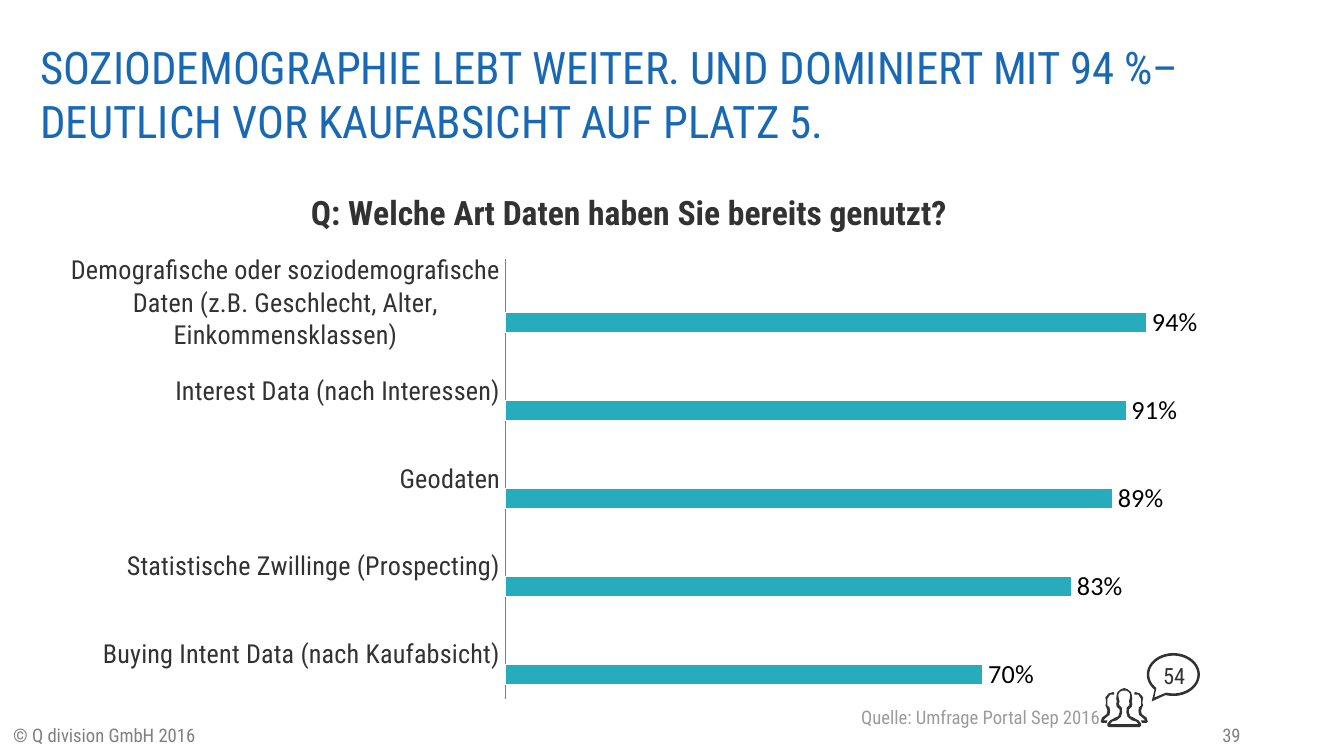
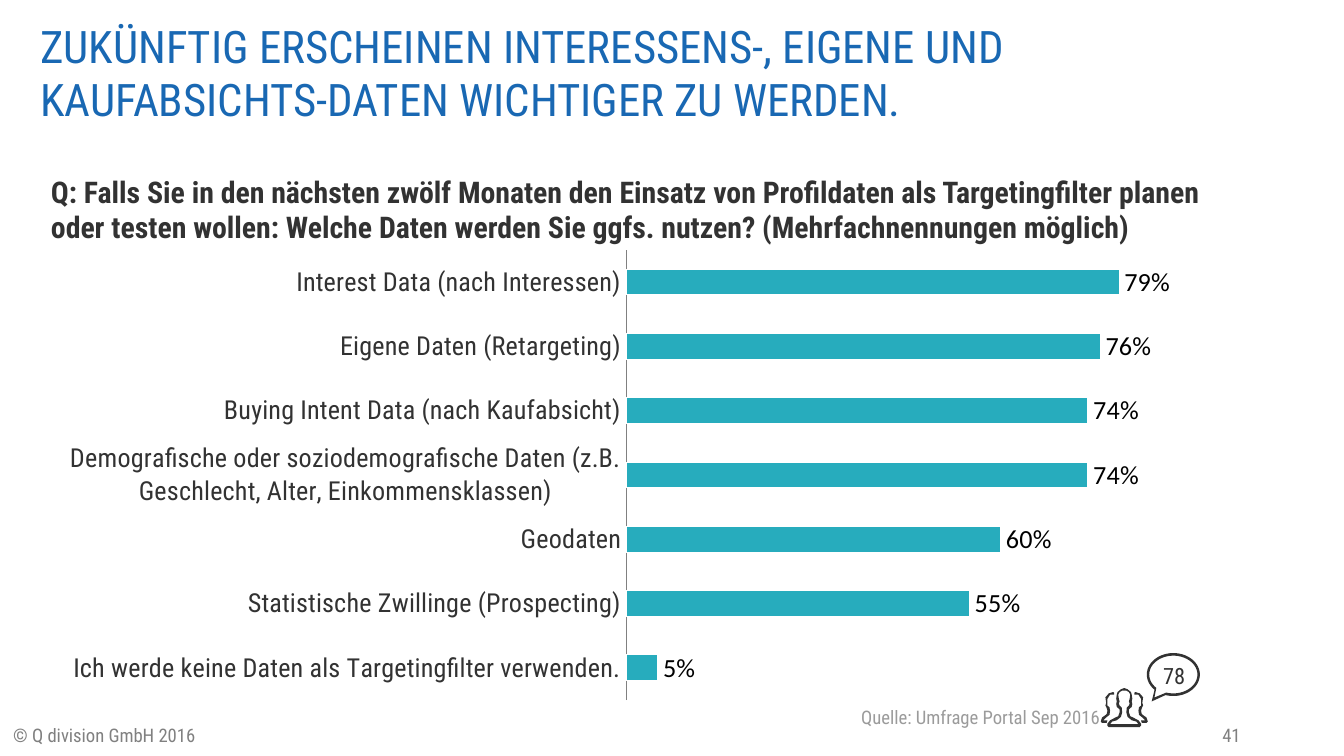
import math
from dataclasses import dataclass

from lxml import etree
from pptx import Presentation
from pptx import util as u
from pptx.chart.data import CategoryChartData
from pptx.dml.color import RGBColor
from pptx.enum import chart as ch
from pptx.enum import text as tx
from pptx.oxml.ns import qn

Pt = u.Pt
Point = tuple[float, float]

FONT, LABEL_FONT = "Roboto Condensed", "Calibri"
BLUE, TEAL, RED, GREEN = "1968B3", "27ACBD", "C0504D", "9BBB59"
DARK, GREY, LIGHT_GREY, BLACK, WHITE = "323232", "808080", "9B9B9B", "000000", "FFFFFF"

DEMOGRAPHY = "Demografische oder soziodemografische Daten (z.B. Geschlecht, Alter, Einkommensklassen)"
INTEREST = "Interest Data (nach Interessen)"
BUYING = "Buying Intent Data (nach Kaufabsicht)"
TWINS = "Statistische Zwillinge (Prospecting)"
GEO = "Geodaten"

# Halves of the audience icon: distance left of its axis, distance below its top.
AUDIENCE_AXIS, AUDIENCE_TOP = 602.3, 368.6
PERSON_OUTSIDE = [
    (0, 0), (1.8, 0.7), (3.6, 2.2), (4, 3.6), (4.3, 5.8), (4, 7.2), (4.3, 8.6),
    (4, 10.1), (2.5, 11.5), (2.5, 13), (3.2, 15.1), (4.7, 15.8), (7.6, 17.3),
    (9, 19.1), (9, 20.2), (8.3, 20.9),
]
PERSON_INSIDE = [
    (0, 1.4), (1.1, 1.4), (2.5, 2.2), (3.2, 3.6), (2.9, 5.8), (2.5, 7.2), (2.9, 8.3),
    (2.5, 9.4), (1.4, 10.4), (1.1, 13), (1.8, 15.5), (4, 17.3), (6.5, 18), (7.6, 19.4),
]
NEIGHBOUR = [
    (9.7, 15.8), (7.9, 14.4), (7.6, 12.2), (7.9, 10.4), (9, 9.4), (9, 7.2), (9, 5.8),
    (7.6, 3.6), (5.4, 3.6), (5.4, 2.5), (6.1, 2.2), (8.3, 2.9), (10.1, 5), (9.7, 7.9),
    (10.1, 9.4), (9.4, 10.8), (9, 12.2), (9.4, 14), (10.4, 14.8), (11.9, 15.8),
    (12.6, 18), (11.9, 18.7), (9.4, 18.7), (9, 17.3), (11.2, 17.3),
]


@dataclass
class Box:
    left: float
    top: float
    width: float
    height: float

    def lengths(self) -> tuple:
        return Pt(self.left), Pt(self.top), Pt(self.width), Pt(self.height)


@dataclass
class TextStyle:
    size: float
    color: str
    bold: bool = False
    align: tx.PP_ALIGN = tx.PP_ALIGN.LEFT


@dataclass
class BarChart:
    box: Box
    plot: Box  # fractions of the chart area
    maximum: float
    bars: list[tuple[str, float]]  # from bottom to top
    empty_series: int = 0
    title: str = ""


@dataclass
class SurveySlide:
    title: str
    title_top: float
    number: str
    answers: str
    chart: BarChart
    question: str = ""


FOOTER = TextStyle(10, GREY)
PAGE_NUMBER = TextStyle(10, GREY, align=tx.PP_ALIGN.RIGHT)
TITLE = TextStyle(24, BLUE)
SOURCE = TextStyle(10, LIGHT_GREY)
COUNT = TextStyle(12, DARK, align=tx.PP_ALIGN.CENTER)
QUESTION = TextStyle(16, DARK, bold=True)
CHART_TITLE = TextStyle(18, DARK, bold=True)

SLIDES = [
    SurveySlide(
        "SOZIODEMOGRAPHIE LEBT WEITER. UND DOMINIERT MIT 94 %– "
        "DEUTLICH VOR KAUFABSICHT AUF PLATZ 5.",
        28.1, "39", "54",
        BarChart(
            Box(25.2, 89.3, 623.5, 291.6), Box(0.394, 0.17, 0.586, 0.808), 1.0,
            [(BUYING, 0.7), (TWINS, 0.83), (GEO, 0.89), (INTEREST, 0.91), (DEMOGRAPHY, 0.94)],
            empty_series=2,
            title="Q: Welche Art Daten haben Sie bereits genutzt?",
        ),
    ),
    SurveySlide(
        "ZUKÜNFTIG ERSCHEINEN INTERESSENS-, EIGENE UND "
        "KAUFABSICHTS-DATEN WICHTIGER ZU WERDEN.",
        16.6, "41", "78",
        BarChart(
            Box(25.2, 128.9, 623.5, 252), Box(0.498, 0.02, 0.482, 0.957), 0.9,
            [("Ich werde keine Daten als Targetingfilter verwenden.", 0.05), (TWINS, 0.55),
             (GEO, 0.6), (DEMOGRAPHY, 0.74), (BUYING, 0.74),
             ("Eigene Daten (Retargeting)", 0.76), (INTEREST, 0.79)],
        ),
        "Q: Falls Sie in den nächsten zwölf Monaten den Einsatz von Profildaten als "
        "Targetingfilter planen oder testen wollen: Welche Daten werden Sie ggfs. nutzen? "
        "(Mehrfachnennungen möglich)",
    ),
]


def rgb(color: str) -> RGBColor:
    return RGBColor.from_string(color)


def set_font(font, size: float, color: str, bold: bool = False, name: str = FONT) -> None:
    font.name, font.size, font.bold = name, Pt(size), bold
    font.color.rgb = rgb(color)


def add_text(slide, box: Box, words: str, style: TextStyle, wrap: bool = True):
    frame = slide.shapes.add_textbox(*box.lengths()).text_frame
    frame.word_wrap = wrap
    frame.auto_size = tx.MSO_AUTO_SIZE.SHAPE_TO_FIT_TEXT
    paragraph = frame.paragraphs[0]
    paragraph.text, paragraph.alignment = words, style.align
    set_font(paragraph.font, style.size, style.color, style.bold)
    return frame


def add_title(slide, words: str, top: float) -> None:
    frame = add_text(slide, Box(1.4, top, 664.6, 43.9), words, TITLE)
    frame.auto_size = tx.MSO_AUTO_SIZE.NONE
    frame.vertical_anchor = tx.MSO_ANCHOR.MIDDLE
    frame.margin_left = Pt(20.2)
    frame.margin_top = frame.margin_right = frame.margin_bottom = 0


def add_outline(slide, contours: list[list[Point]]) -> None:
    """Fill closed contours; a contour inside another one cuts a hole."""
    paths = [[(Pt(x), Pt(y)) for x, y in contour] for contour in contours]
    builder = slide.shapes.build_freeform(*paths[0][0], scale=1.0)
    builder.add_line_segments(paths[0][1:])
    for path in paths[1:]:
        builder.move_to(*path[0])
        builder.add_line_segments(path[1:])
    shape = builder.convert_to_shape()
    shape.shadow.inherit = False
    shape.fill.solid()
    shape.fill.fore_color.rgb = rgb(DARK)
    shape.line.fill.background()


def bubble(radius_x: float, radius_y: float, tip: Point) -> list[Point]:
    """Ellipse that leaves its rim at the lower left for the tip of the tail."""
    angles = [math.radians(degrees) for degrees in range(135, 468, 4)]
    rim = [(628.6 + radius_x * math.cos(a), 361.4 + radius_y * math.sin(a)) for a in angles]
    return rim + [tip, rim[0]]


def audience_side(half: list[Point], side: int) -> list[Point]:
    return [(AUDIENCE_AXIS + side * x, AUDIENCE_TOP + y) for x, y in half]


def person(half: list[Point]) -> list[Point]:
    left, right = audience_side(half, -1), audience_side(half, 1)
    return left + right[::-1]


def add_audience(slide, answers: str) -> None:
    add_outline(slide, [bubble(14.2, 11.5, (617, 375.8)), bubble(12.9, 10.1, (618.5, 373.7))])
    add_text(slide, Box(614.2, 351.4, 29.5, 21.6), answers, COUNT)
    neighbours = [audience_side(NEIGHBOUR + NEIGHBOUR[:1], side) for side in (-1, 1)]
    add_outline(slide, [person(PERSON_OUTSIDE), person(PERSON_INSIDE), *neighbours])


def place_plot(chart, plot: Box) -> None:
    """Fix the inner plot area inside the chart."""
    area = chart._chartSpace.chart.plotArea
    for automatic in area.findall(qn("c:layout")):
        area.remove(automatic)
    layout = etree.Element(qn("c:layout"))
    manual = etree.SubElement(layout, qn("c:manualLayout"))
    settings = {
        "layoutTarget": "inner", "xMode": "edge", "yMode": "edge",
        "x": plot.left, "y": plot.top, "w": plot.width, "h": plot.height,
    }
    for name, value in settings.items():
        etree.SubElement(manual, qn(f"c:{name}")).set("val", str(value))
    area.insert(0, layout)


def add_bar_chart(slide, bar_chart: BarChart) -> None:
    data = CategoryChartData(number_format="0%")
    data.categories = [name for name, _ in bar_chart.bars]
    data.add_series("Series 1", [value for _, value in bar_chart.bars])
    for index in range(bar_chart.empty_series):
        data.add_series(f"Series {index + 2}", [None] * len(bar_chart.bars))
    chart = slide.shapes.add_chart(
        ch.XL_CHART_TYPE.BAR_CLUSTERED, *bar_chart.box.lengths(), data).chart
    set_font(chart.font, 18, BLACK, name=LABEL_FONT)
    chart.has_legend = False
    chart.has_title = bool(bar_chart.title)
    if bar_chart.title:
        paragraph = chart.chart_title.text_frame.paragraphs[0]
        paragraph.text = bar_chart.title
        set_font(paragraph.font, CHART_TITLE.size, CHART_TITLE.color, CHART_TITLE.bold)
        chart.chart_title.include_in_layout = False

    names = chart.category_axis
    names.major_tick_mark = names.minor_tick_mark = ch.XL_TICK_MARK.NONE
    names.format.line.color.rgb = rgb(GREY)
    names.format.line.width = Pt(0.75)
    set_font(names.tick_labels.font, 14, DARK)
    values = chart.value_axis
    values.minimum_scale, values.maximum_scale = 0, bar_chart.maximum
    values.has_major_gridlines = values.visible = False
    values.tick_labels.number_format = "0.00%"
    values.tick_labels.number_format_is_linked = False

    plot = chart.plots[0]
    plot.gap_width, plot.vary_by_categories = 150, False
    for series, color in zip(plot.series, (TEAL, RED, GREEN)):
        series.invert_if_negative = False
        series.format.fill.solid()
        series.format.fill.fore_color.rgb = rgb(color)
        series.format.line.color.rgb = rgb(WHITE)
        labels = series.data_labels
        labels.show_value = True
        labels.number_format, labels.number_format_is_linked = "0%", False
        labels.position = ch.XL_LABEL_POSITION.OUTSIDE_END
        set_font(labels.font, 14, BLACK, name=LABEL_FONT)
    place_plot(chart, bar_chart.plot)


def add_survey_slide(presentation, survey: SurveySlide) -> None:
    slide = presentation.slides.add_slide(presentation.slide_layouts[6])
    add_text(slide, Box(620.6, 384.5, 51.1, 19.4), survey.number, PAGE_NUMBER)
    add_text(slide, Box(0, 384.5, 193, 19.4), "© Q division GmbH 2016", FOOTER)
    add_title(slide, survey.title, survey.title_top)
    add_bar_chart(slide, survey.chart)
    add_audience(slide, survey.answers)
    add_text(slide, Box(454.3, 374.4, 144, 19.4), "Quelle: Umfrage Portal Sep 2016", SOURCE, wrap=False)
    if survey.question:
        add_text(slide, Box(20.2, 89.3, 640.1, 46.1), survey.question, QUESTION)


def main() -> None:
    presentation = Presentation()
    presentation.slide_width, presentation.slide_height = Pt(720), Pt(405)
    for survey in SLIDES:
        add_survey_slide(presentation, survey)
    presentation.save("out.pptx")


if __name__ == "__main__":
    main()
